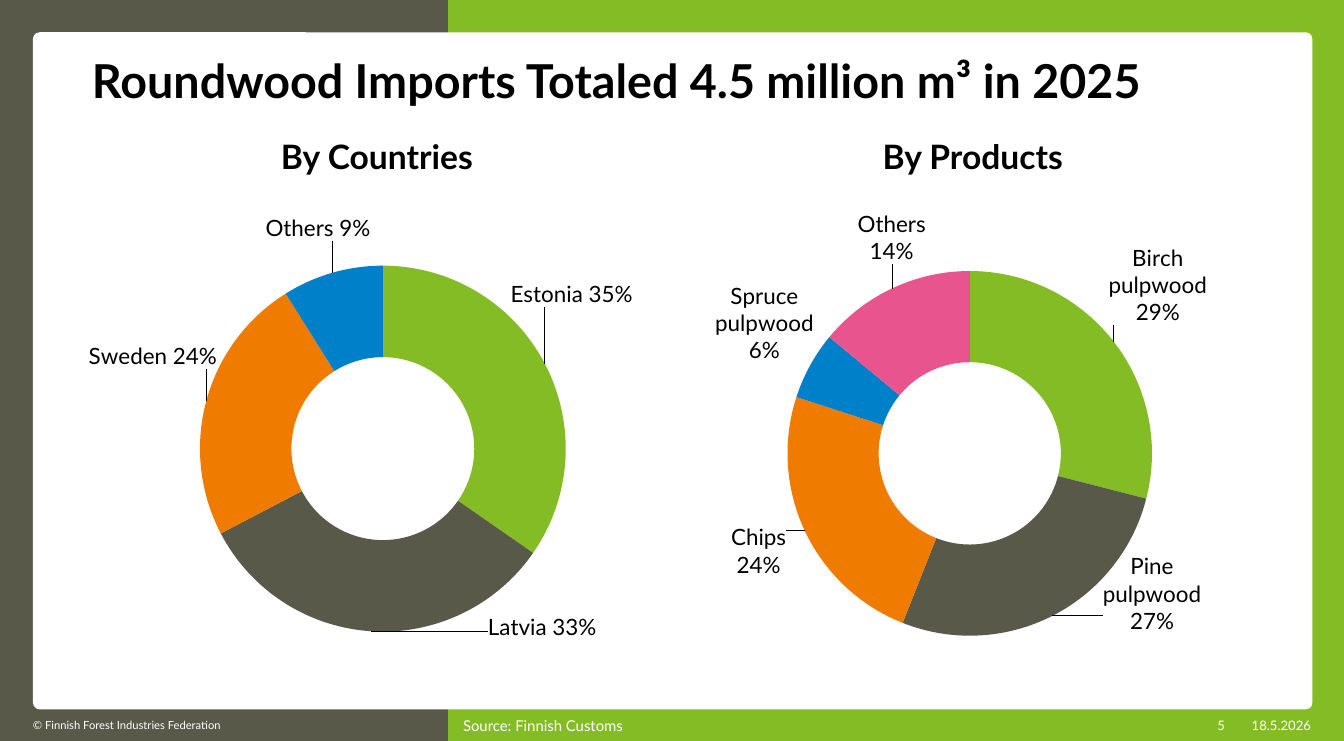
from copy import deepcopy
from dataclasses import dataclass
from math import cos, pi, sin

from pptx import Presentation
from pptx.chart.data import CategoryChartData
from pptx.dml.color import RGBColor
from pptx.enum.chart import XL_CHART_TYPE
from pptx.enum.shapes import MSO_SHAPE
from pptx.enum.text import MSO_ANCHOR, PP_ALIGN
from pptx.oxml import parse_xml
from pptx.oxml.ns import nsdecls, qn
from pptx.util import Inches, Pt

RING = XL_CHART_TYPE.DOUGHNUT
RECT, ROUND = MSO_SHAPE.RECTANGLE, MSO_SHAPE.ROUNDED_RECTANGLE
TOP, MIDDLE, BOTTOM = MSO_ANCHOR.TOP, MSO_ANCHOR.MIDDLE, MSO_ANCHOR.BOTTOM
LEFT, CENTER, RIGHT = PP_ALIGN.LEFT, PP_ALIGN.CENTER, PP_ALIGN.RIGHT


@dataclass(frozen=True)
class Theme:
    """Colours, font and type sizes of the slide."""
    font: str = "Lato"
    white: str = "FFFFFF"
    black: str = "000000"
    green: str = "84BC26"
    earth: str = "595949"
    slices: tuple = ("84BC26", "595949", "EF7C00", "0080C8", "E8548D")
    title: int = 50
    head: int = 36
    label: int = 24
    source: int = 16
    small: int = 14
    tiny: int = 12
    base: int = 10


@dataclass(frozen=True)
class Box:
    """A rectangle in inches."""
    x: float
    y: float
    w: float
    h: float

    def inner(self, x, y, w, h):
        """Return an inner box given in percent of this one."""
        return Box(self.x + self.w * x / 100, self.y + self.h * y / 100,
                   self.w * w / 100, self.h * h / 100)

    def place(self):
        """Return left, top, width and height as lengths."""
        return [Inches(side) for side in (self.x, self.y, self.w, self.h)]


THEME = Theme()


def apply(target, values):
    """Set each named attribute on the target."""
    for name, value in values.items():
        setattr(target, name, value)


def style(font, size, color, bold=False):
    """Give a font its face, size, weight and colour."""
    apply(font, {"name": THEME.font, "size": Pt(size), "bold": bold})
    font.color.rgb = RGBColor.from_string(color)


def paint(target, color):
    """Fill a target with one colour and hide its line."""
    target.fill.solid()
    target.fill.fore_color.rgb = RGBColor.from_string(color)
    target.line.fill.background()


def add_block(slide, box, kind, color):
    """Draw a plain filled shape."""
    block = slide.shapes.add_shape(kind, *box.place())
    block.shadow.inherit = False
    paint(block, color)
    return block


def add_words(slide, box, words, size, color, bold=False, align=LEFT,
              anchor=MIDDLE, inset=(0, 0), space=1.0):
    """Write one paragraph in a box."""
    frame = slide.shapes.add_textbox(*box.place()).text_frame
    side, edge = (Inches(gap) for gap in inset)
    apply(frame, {"word_wrap": True, "vertical_anchor": anchor,
                  "margin_left": side, "margin_right": side,
                  "margin_top": edge, "margin_bottom": edge})
    line = frame.paragraphs[0]
    apply(line, {"text": words, "alignment": align, "line_spacing": space})
    style(line.runs[0].font, size, color, bold)


def add_frame(slide, box):
    """Draw the two-tone frame and its white panel."""
    add_block(slide, box.inner(0, 0, 33.35, 100), RECT, THEME.earth)
    add_block(slide, box.inner(33.35, 0, 66.65, 100), RECT, THEME.green)
    panel = add_block(slide, box.inner(2.45, 4.36, 95.2, 91.38), ROUND, THEME.white)
    panel.adjustments[0] = 0.01


def add_footer(slide, box):
    """Write the line at the foot of the slide."""
    for left, width, words, size, align in (
            (2.45, 30.9, "© Finnish Forest Industries Federation", THEME.tiny, LEFT),
            (34.45, 31.1, "Source: Finnish Customs", THEME.source, LEFT),
            (88.45, 2.7, "5", THEME.small, RIGHT),
            (92.1, 5.45, "18.5.2026", THEME.small, RIGHT)):
        add_words(slide, box.inner(left, 0, width, 100), words, size,
                  THEME.white, align=align)


def layout(x, y, size=None):
    """Build a manual chart layout from shares of the chart."""
    sides = {"x": x, "y": y}
    head = ""
    if size:
        sides.update(w=size[0], h=size[1])
        head = ('<c:layoutTarget val="inner"/>'
                '<c:xMode val="edge"/><c:yMode val="edge"/>')
    body = "".join(f'<c:{key} val="{val:.4f}"/>' for key, val in sides.items())
    return parse_xml(f'<c:layout {nsdecls("c")}><c:manualLayout>{head}{body}'
                     '</c:manualLayout></c:layout>')


def add_labels(series, box, plot, spots, values, gap):
    """Move each label from its slice to its spot in the chart."""
    labels = series.data_labels
    apply(labels, {"show_value": True, "show_category_name": True,
                   "number_format": "0%", "number_format_is_linked": False})
    style(labels.font, THEME.label, THEME.black)
    root = labels._element
    root.find(".//" + qn("a:bodyPr")).set("wrap", "square")
    for line in root.findall(qn("c:showLeaderLines")):
        root.remove(line)
    mark = parse_xml(f'<c:separator {nsdecls("c")}/>')
    mark.text = gap
    root.find(qn("c:showBubbleSize")).addnext(mark)
    shared = list(root)
    x, y, w, h = plot
    reach = 0.75 * min(w * box.w, h * box.h) / 2
    total, start = sum(values), 0
    for index, (value, spot) in enumerate(zip(values, spots)):
        angle = 2 * pi * (start + value / 2) / total
        start += value
        across = x + w / 2 + reach * sin(angle) / box.w
        down = y + h / 2 - reach * cos(angle) / box.h
        label = parse_xml(f'<c:dLbl {nsdecls("c")}><c:idx val="{index}"/></c:dLbl>')
        label.append(layout(spot[0] - across, spot[1] - down))
        label.extend(deepcopy(shared))
        root.insert(index, label)


def add_ring(slide, box, rows, plot, gap):
    """Draw a doughnut chart with labels set around it."""
    names, values, spots = zip(*rows)
    data = CategoryChartData(number_format="0%")
    data.categories = names
    data.add_series("Series 1", values)
    chart = slide.shapes.add_chart(RING, *box.place(), data).chart
    apply(chart, {"has_legend": False, "has_title": False})
    style(chart.font, THEME.base, THEME.earth)
    ring = chart.plots[0]
    ring.vary_by_categories = True
    ring._element.find(qn("c:holeSize")).set("val", "55")
    area = ring._element.getparent()
    for old in area.findall(qn("c:layout")):
        area.remove(old)
    area.insert(0, layout(*plot[:2], plot[2:]))
    series = ring.series[0]
    for index, color in enumerate(THEME.slices[:len(values)]):
        paint(series.points[index].format, color)
    add_labels(series, box, plot, spots, values, gap)


def add_panel(slide, box, head, rows, plot, gap):
    """Place a heading above its doughnut chart."""
    add_words(slide, box.inner(0.5, 0, 99, 8.79), head, THEME.head, THEME.black,
              True, CENTER, BOTTOM, (0.2, 0.2), 0.9)
    add_ring(slide, box.inner(0, 8.66, 100, 91.34), rows, plot, gap)


def main():
    """Build and save the slide."""
    deck = Presentation()
    page = Box(0, 0, 20, 11.02)
    apply(deck, {"slide_width": Inches(page.w), "slide_height": Inches(page.h)})
    slide = deck.slides.add_slide(deck.slide_layouts[6])
    lands = [("Estonia", 0.35, (0.83, 0.22)), ("Latvia", 0.33, (0.78, 0.92)),
             ("Sweden", 0.24, (0.12, 0.35)), ("Others", 0.09, (0.4, 0.08))]
    goods = [("Birch pulpwood", 0.29, (0.82, 0.2)),
             ("Pine pulpwood", 0.27, (0.81, 0.85)),
             ("Chips", 0.24, (0.13, 0.76)),
             ("Spruce pulpwood", 0.06, (0.14, 0.28)),
             ("Others", 0.14, (0.36, 0.1))]
    add_frame(slide, page)
    add_footer(slide, page.inner(0, 95.74, 100, 4.32))
    add_words(slide, page.inner(6.35, 7.35, 87.55, 13.16),
              "Roundwood Imports Totaled 4.5 million m³ in 2025", THEME.title,
              THEME.black, True, anchor=TOP, inset=(0.1, 0.05), space=0.9)
    add_panel(slide, page.inner(6.1, 19.51, 43.9, 70.23), "By Countries", lands,
              (0.19, 0.16, 0.64, 0.77), " ")
    add_panel(slide, page.inner(50.85, 19.51, 43.05, 70.23), "By Products", goods,
              (0.18, 0.17, 0.63, 0.77), "\n")
    deck.save("out.pptx")


if __name__ == "__main__":
    main()
